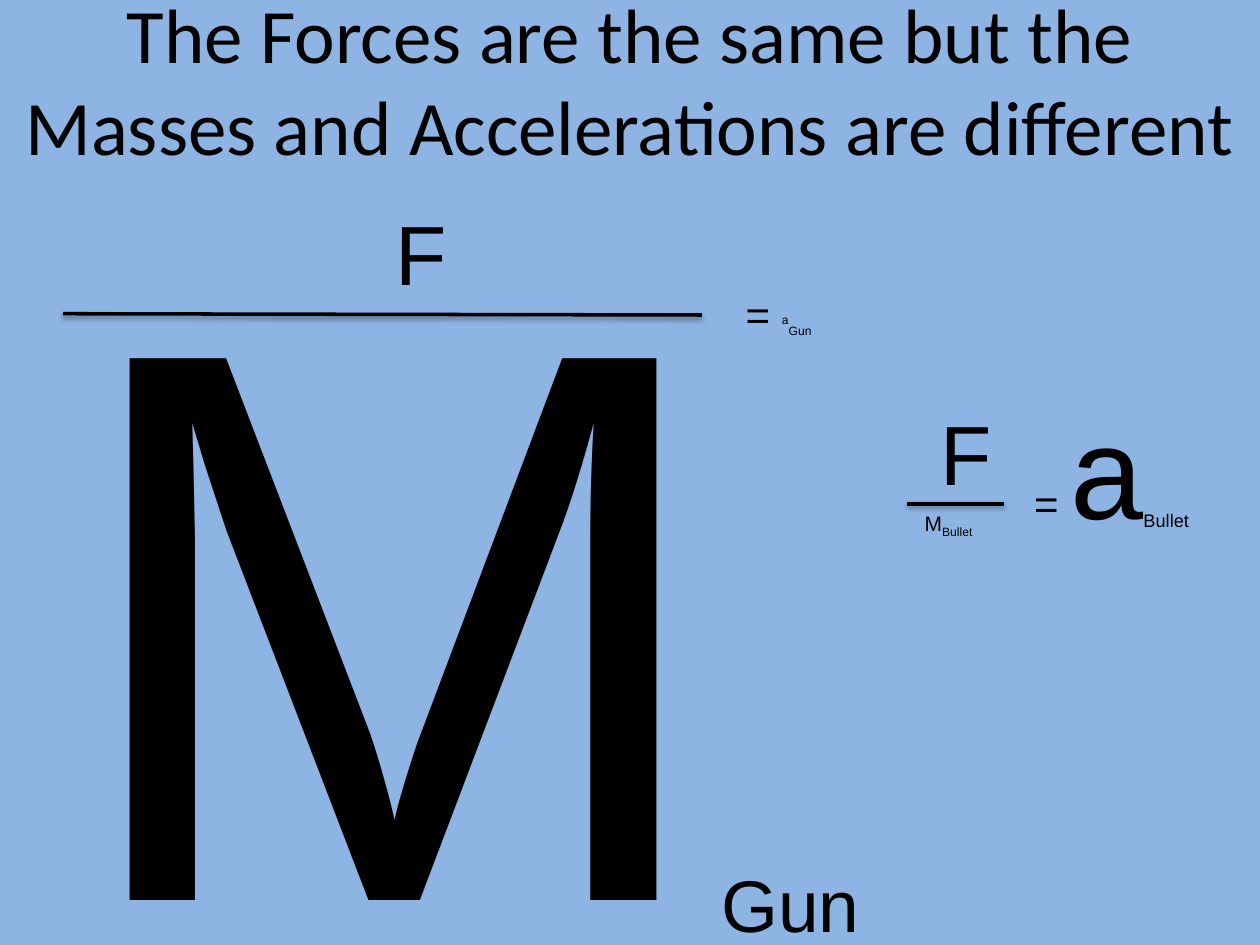
from lxml import etree
from pptx import Presentation
from pptx.dml.color import RGBColor
from pptx.enum.shapes import MSO_CONNECTOR
from pptx.enum.text import MSO_ANCHOR, MSO_AUTO_SIZE, PP_ALIGN
from pptx.oxml.ns import qn
from pptx.util import Inches, Pt

BLACK = "000000"
SKY = "8EB4E3"
SUBSCRIPT, SUPERSCRIPT = -25, 30


def color(hex_value):
    """Turn a hex string into a colour."""
    return RGBColor.from_string(hex_value)


def add_run(paragraph, text, size, font="Arial", baseline=None):
    """Append one formatted run, raised or lowered by a baseline percentage."""
    run = paragraph.add_run()
    run.text = text
    run.font.size = Pt(size)
    run.font.name = font
    run.font.color.rgb = color(BLACK)
    if baseline:
        run.font._element.set("baseline", str(baseline * 1000))


def add_term(slide, left, top, width, height, runs):
    """Place one term of an equation from (text, size, baseline) runs."""
    term = slide.shapes.add_textbox(Inches(left), Inches(top), Inches(width), Inches(height))
    frame = term.text_frame
    frame.word_wrap = True
    frame.auto_size = MSO_AUTO_SIZE.SHAPE_TO_FIT_TEXT
    for text, size, baseline in runs:
        add_run(frame.paragraphs[0], text, size, baseline=baseline)


def add_fraction_bar(slide, x1, y1, x2, y2):
    """Draw a fraction bar with a soft shadow below it."""
    bar = slide.shapes.add_connector(
        MSO_CONNECTOR.STRAIGHT, Inches(x1), Inches(y1), Inches(x2), Inches(y2))
    bar.line.color.rgb = color(BLACK)
    bar.line.width = Pt(2)
    effects = etree.SubElement(bar._element.spPr, qn("a:effectLst"))
    shadow = etree.SubElement(effects, qn("a:outerShdw"), blurRad=str(Pt(3.1)),
                              dist=str(Pt(1.6)), dir="5400000", rotWithShape="0")
    tone = etree.SubElement(shadow, qn("a:srgbClr"), val=BLACK)
    etree.SubElement(tone, qn("a:alpha"), val="38000")


def add_title(slide, left, top, width, height):
    """Fill and place the title placeholder."""
    title = slide.shapes.title
    title.left, title.top = Inches(left), Inches(top)
    title.width, title.height = Inches(width), Inches(height)
    frame = title.text_frame
    frame.word_wrap = True
    frame.auto_size = MSO_AUTO_SIZE.NONE
    frame.vertical_anchor = MSO_ANCHOR.MIDDLE
    heading = frame.paragraphs[0]
    heading.alignment = PP_ALIGN.CENTER
    add_run(heading, "The Forces are the same but the Masses and Accelerations are different",
            44, "Calibri")


def add_gun_equation(slide, left, top):
    """Show force over a huge mass giving a tiny acceleration."""
    add_term(slide, left, top, 7.35, 7.67, [("M", 450, None), ("Gun", 72, SUBSCRIPT)])
    add_term(slide, left + 2.62, top + 0.7, 0.6, 0.91, [("F", 48, None)])
    add_fraction_bar(slide, left + 0.08, top + 1.64, left + 5.15, top + 1.65)
    add_term(slide, left + 5.4, top + 1.39, 1.39, 0.5,
             [("= ", 24, None), ("a", 12, SUPERSCRIPT), ("Gun", 12, SUBSCRIPT)])


def add_bullet_equation(slide, left, top):
    """Show force over a tiny mass giving a large acceleration."""
    add_term(slide, left + 0.17, top + 0.11, 0.6, 0.91, [("F", 48, None)])
    add_term(slide, left + 0.04, top + 0.97, 0.87, 0.3,
             [("M", 12, None), ("Bullet", 12, SUBSCRIPT)])
    add_fraction_bar(slide, left, top + 0.97, left + 0.77, top + 0.97)
    add_term(slide, left + 0.91, top, 1.89, 1.36,
             [("= ", 24, None), ("a", 75, None), ("Bullet", 18, SUBSCRIPT)])


def main():
    """Build and save the slide."""
    deck = Presentation()
    deck.slide_width, deck.slide_height = Inches(10), Inches(7.5)
    slide = deck.slides.add_slide(deck.slide_layouts[5])
    slide.background.fill.solid()
    slide.background.fill.fore_color.rgb = color(SKY)
    add_title(slide, 0, 0, 10, 1.25)
    add_gun_equation(slide, 0.42, 0.85)
    add_bullet_equation(slide, 7.2, 3.03)
    deck.save("out.pptx")


if __name__ == "__main__":
    main()
